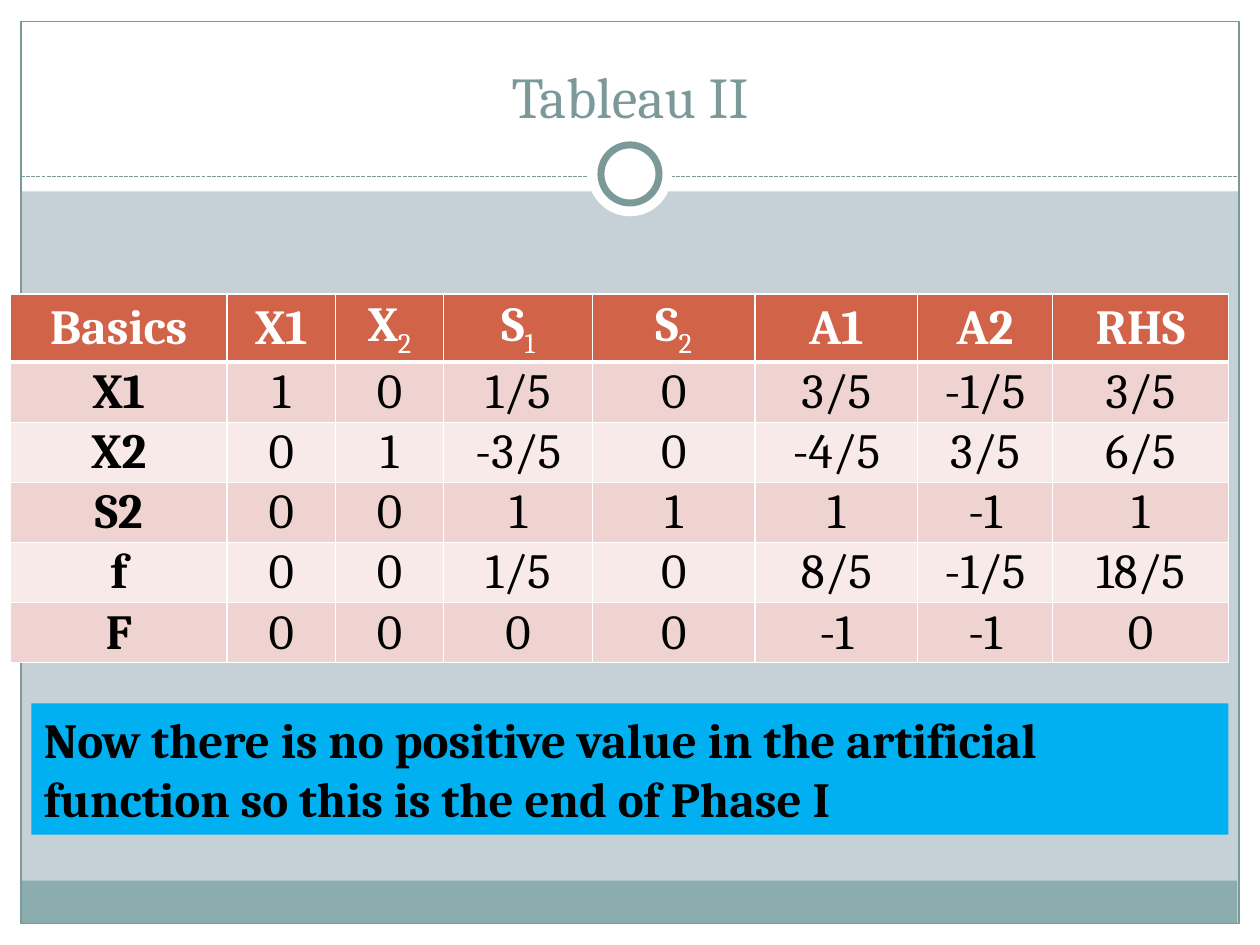
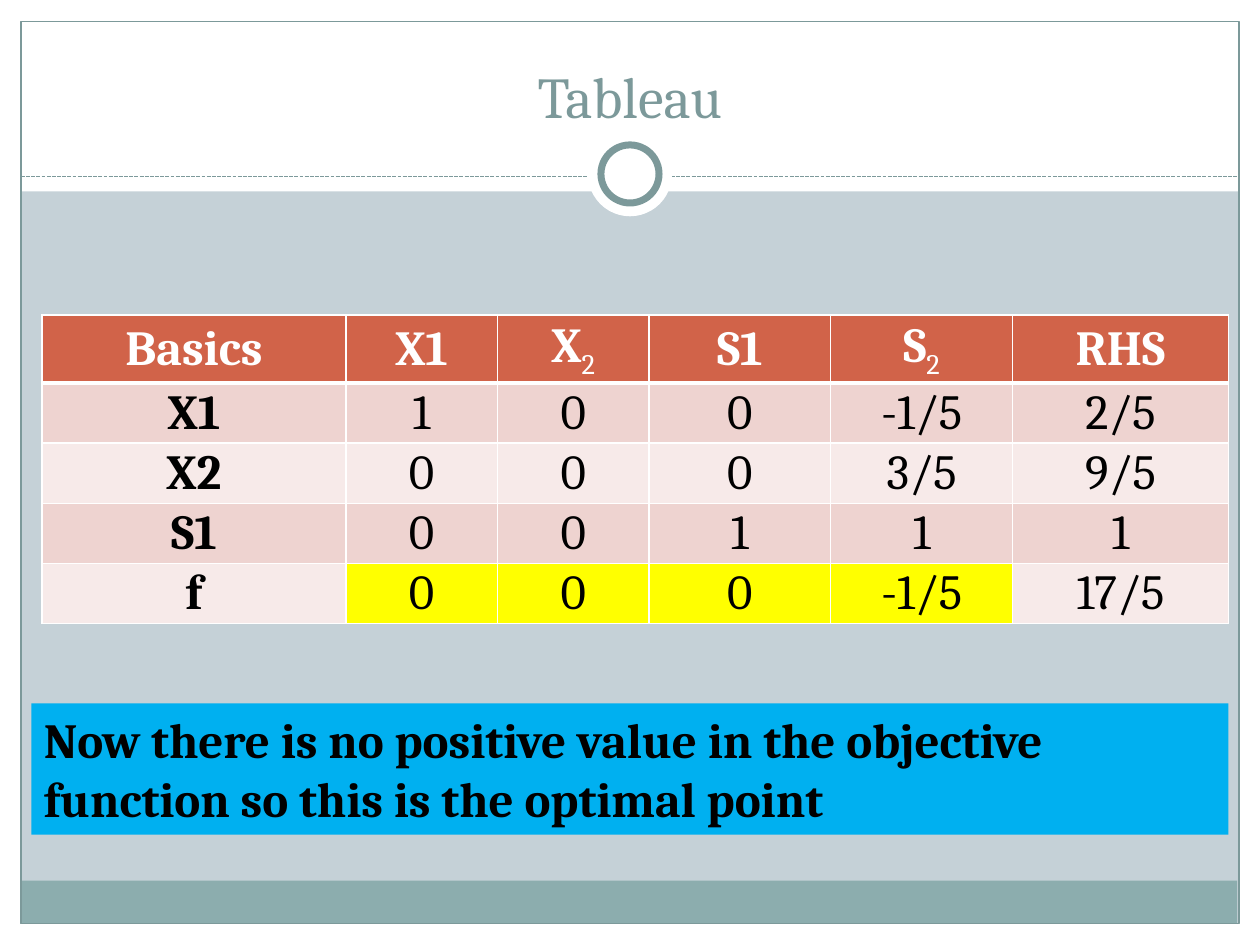
from dataclasses import dataclass

from lxml.etree import SubElement
from pptx import Presentation
from pptx.dml.color import RGBColor
from pptx.enum.dml import MSO_LINE
from pptx.enum.shapes import MSO_CONNECTOR, MSO_SHAPE
from pptx.enum.text import MSO_ANCHOR, MSO_AUTO_SIZE, PP_ALIGN
from pptx.oxml import parse_xml
from pptx.oxml.ns import nsdecls, qn
from pptx.util import Pt

FONT = "Cambria"
INK = {
    "ground": "C5D1D7",
    "white": "FFFFFF",
    "black": "000000",
    "band": "8CADAE",
    "frame": "7C999A",
    "head": "D16349",
    "odd": "EED3D0",
    "even": "F7EAE9",
    "mark": "FFFF00",
    "note": "00B0F0",
}


@dataclass
class Part:
    left: float
    top: float
    width: float
    height: float
    fill: str = ""
    line: str = ""
    weight: float = 0
    kind: MSO_SHAPE = MSO_SHAPE.RECTANGLE


@dataclass
class Page:
    title: str
    left: float
    top: float
    height: float
    widths: list[float]
    rows: list[str]
    note: str
    marks: range = range(0)


BACK = [
    Part(0, 527.76, 720, 12.24, "white"),
    Part(0, 0, 720, 109.44, "white"),
    Part(0, 0, 12, 540, "white"),
    Part(708, 0, 12, 540, "white"),
    Part(11.52, 503.28, 695.52, 24.48, "band"),
    Part(12, 12.24, 696, 515.52, "", "frame", 0.75),
]
RINGS = [
    Part(336, 75.6, 48, 48, "white", kind=MSO_SHAPE.OVAL),
    Part(343.4, 82.8, 33.2, 33.2, "white", "frame", 4, MSO_SHAPE.OVAL),
]
NOTE = Part(18, 402, 684, 75, "note")

PAGES = [
    Page(
        "Tableau II", 6, 168, 206,
        [123.8, 61.9, 61.9, 85, 92.9, 92.9, 77, 100.8],
        [
            "Basics X1 X_2 S_1 S_2 A1 A2 RHS",
            "X1 1 0 1/5 0 3/5 -1/5 3/5",
            "X2 0 1 -3/5 0 -4/5 3/5 6/5",
            "S2 0 0 1 1 1 -1 1",
            "f 0 0 1/5 0 8/5 -1/5 18/5",
            "F 0 0 0 0 -1 -1 0",
        ],
        "Now there is no positive value in the artificial function "
        "so this is the end of Phase I",
    ),
    Page(
        "Tableau", 24, 180, 172,
        [173.6, 86.6, 86.6, 103.9, 103.9, 123.4],
        [
            "Basics X1 X_2 S1 S_2 RHS",
            "X1 1 0 0 -1/5 2/5",
            "X2 0 0 0 3/5 9/5",
            "S1 0 0 1 1 1",
            "f 0 0 0 -1/5 17/5",
        ],
        "Now there is no positive value in the objective function "
        "so this is the optimal point",
        range(1, 5),
    ),
]


def paint(fill, name: str) -> None:
    fill.solid()
    fill.fore_color.rgb = RGBColor.from_string(INK[name])


def style(run, size: float, tint: str, bold: bool = False) -> None:
    run.font.name = FONT
    run.font.size = Pt(size)
    run.font.bold = bold
    run.font.color.rgb = RGBColor.from_string(INK[tint])


def add_part(slide, part: Part):
    shape = slide.shapes.add_shape(
        part.kind, Pt(part.left), Pt(part.top), Pt(part.width), Pt(part.height)
    )
    shape.shadow.inherit = False
    if part.fill:
        paint(shape.fill, part.fill)
    else:
        shape.fill.background()
    if part.line:
        paint(shape.line.fill, part.line)
        shape.line.width = Pt(part.weight)
    else:
        shape.line.fill.background()
    return shape


def add_rule(slide) -> None:
    rule = slide.shapes.add_connector(
        MSO_CONNECTOR.STRAIGHT, Pt(12), Pt(100.8), Pt(708), Pt(100.8)
    )
    paint(rule.line.fill, "frame")
    rule.line.width = Pt(0.75)
    rule.line.dash_style = MSO_LINE.SQUARE_DOT
    SubElement(rule._element.spPr, qn("a:effectLst"))


def add_title(slide, text: str) -> None:
    box = slide.shapes.add_textbox(Pt(24), Pt(18), Pt(672), Pt(60))
    frame = box.text_frame
    frame.word_wrap = True
    frame.vertical_anchor = MSO_ANCHOR.BOTTOM
    frame.text = text
    line = frame.paragraphs[0]
    line.alignment = PP_ALIGN.CENTER
    style(line.runs[0], 33, "frame")


def add_note(slide, text: str) -> None:
    frame = add_part(slide, NOTE).text_frame
    frame.word_wrap = True
    frame.auto_size = MSO_AUTO_SIZE.SHAPE_TO_FIT_TEXT
    frame.vertical_anchor = MSO_ANCHOR.TOP
    frame.text = text
    line = frame.paragraphs[0]
    line.alignment = PP_ALIGN.LEFT
    style(line.runs[0], 28, "black", True)


def add_edges(cell, row: int) -> None:
    props = cell._tc.get_or_add_tcPr()
    sizes = {"L": 1, "R": 1, "T": 3 if row == 1 else 1, "B": 3 if row == 0 else 1}
    for place, (side, size) in enumerate(sizes.items()):
        edge = parse_xml(
            f'<a:ln{side} {nsdecls("a")} w="{Pt(size)}"><a:solidFill>'
            f'<a:srgbClr val="{INK["white"]}"/></a:solidFill></a:ln{side}>'
        )
        props.insert(place, edge)


def fill_cell(cell, text: str, row: int, col: int, fill: str) -> None:
    cell.margin_left = cell.margin_right = cell.margin_top = Pt(0.7)
    cell.margin_bottom = 0
    cell.vertical_anchor = MSO_ANCHOR.MIDDLE
    paint(cell.fill, fill)
    add_edges(cell, row)
    base, _, index = text.partition("_")
    tint = "black" if row else "white"
    line = cell.text_frame.paragraphs[0]
    line.text = base
    line.alignment = PP_ALIGN.CENTER
    style(line.runs[0], 28, tint, row == 0 or col == 0)
    if index:
        low = line.add_run()
        low.text = index
        style(low, 28, tint)
        low._r.get_or_add_rPr().set("baseline", "-25000")


def add_grid(slide, page: Page) -> None:
    frame = slide.shapes.add_table(
        len(page.rows), len(page.widths), Pt(page.left), Pt(page.top),
        Pt(sum(page.widths)), Pt(page.height),
    )
    table = frame.table
    for col, width in enumerate(page.widths):
        table.columns[col].width = Pt(width)
    last = len(page.rows) - 1
    for row, words in enumerate(page.rows):
        table.rows[row].height = Pt(29.5)
        shade = "head" if row == 0 else "odd" if row % 2 else "even"
        for col, text in enumerate(words.split()):
            fill = "mark" if row == last and col in page.marks else shade
            fill_cell(table.cell(row, col), text, row, col, fill)
    frame.height = Pt(page.height)


def add_page(deck, page: Page) -> None:
    slide = deck.slides.add_slide(deck.slide_layouts[6])
    paint(slide.background.fill, "ground")
    for part in BACK:
        add_part(slide, part)
    add_rule(slide)
    for ring in RINGS:
        add_part(slide, ring)
    add_title(slide, page.title)
    add_grid(slide, page)
    add_note(slide, page.note)


def main() -> None:
    deck = Presentation()
    deck.slide_width = Pt(720)
    deck.slide_height = Pt(540)
    for page in PAGES:
        add_page(deck, page)
    deck.save("out.pptx")


if __name__ == "__main__":
    main()
